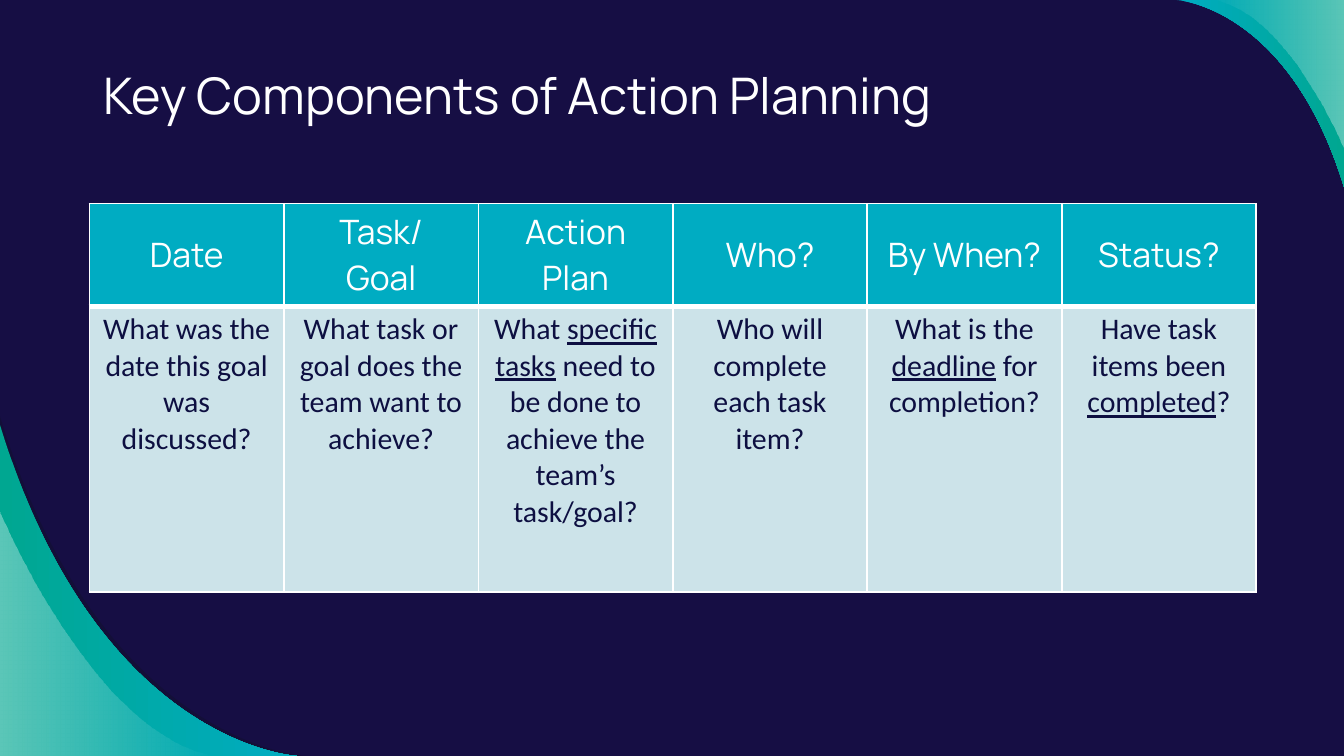
from lxml.etree import SubElement
from pptx import Presentation
from pptx.dml.color import RGBColor
from pptx.enum.text import MSO_ANCHOR as Anchor, PP_ALIGN as Align
from pptx.oxml import parse_xml
from pptx.oxml.ns import nsdecls, qn
from pptx.util import Cm, Pt

WIDTH, HEIGHT = Cm(25.4), Cm(14.29)
COLORS = {
    "night": "160E44",
    "shade": "12102F",
    "cyan": "00ACC2",
    "green": "00A791",
    "white": "FFFFFF",
    "pale": "CCE3E9",
    "ink": "0D0F41",
}
# Control points of an edge running from the top left to the bottom right of its box
OUTER_EDGE = ((0, 0), (0.33, 0.97), (1, 1), (1, 1))
INNER_EDGE = ((0, 0), (0, 0), (0.43, 0.93), (1, 1))

# Heading lines and question; underscores enclose underlined words
COMPONENTS = [
    (["Date"], "What was the date this goal was discussed?"),
    (["Task/", "Goal"], "What task or goal does the team want to achieve?"),
    (["Action Plan"], "What _specific tasks_ need to be done to achieve the team’s task/goal?"),
    (["Who?"], "Who will complete each task item?"),
    (["By When?"], "What is the _deadline_ for completion?"),
    (["Status?"], "Have task items been _completed_?"),
]


def rgb(name):
    return RGBColor.from_string(COLORS[name])


def bend_first_edge(freeform):
    """Turn the first three line segments into one cubic Bézier curve."""
    segments = list(freeform.element.iter(qn("a:lnTo")))[:3]
    curve = parse_xml(f'<a:cubicBezTo {nsdecls("a")}/>')
    segments[0].addprevious(curve)
    for segment in segments:
        curve.append(segment[0])
        segment.getparent().remove(segment)


def add_swoosh(slide, width, height, edge, stops, turned=False):
    """Fill the bottom left corner, or the top right one when turned.

    Each stop is a colour name and an opacity in percent, from left to right
    before turning; a single stop gives a plain fill.
    """
    left, top = (WIDTH - width, 0) if turned else (0, HEIGHT - height)
    points = [*edge, (0, 1)]
    if turned:
        points = [(1 - x, 1 - y) for x, y in points]
        stops = stops[::-1]
    outline = [(round(left + x * width), round(top + y * height)) for x, y in points]
    builder = slide.shapes.build_freeform(*outline[0], scale=1.0)
    builder.add_line_segments(outline[1:], close=True)
    swoosh = builder.convert_to_shape()
    bend_first_edge(swoosh)
    swoosh.shadow.inherit = False
    swoosh.line.fill.background()
    if len(stops) == 1:
        swoosh.fill.solid()
        swoosh.fill.fore_color.rgb = rgb(stops[0][0])
    else:
        swoosh.fill.gradient()
        swoosh.fill.gradient_angle = 0
        for gradient_stop, (color, _) in zip(swoosh.fill.gradient_stops, stops):
            gradient_stop.color.rgb = rgb(color)
    fill_colors = swoosh.element.spPr.iter(qn("a:srgbClr"))
    for fill_color, (_, opacity) in zip(fill_colors, stops):
        if opacity < 100:
            SubElement(fill_color, qn("a:alpha")).set("val", str(opacity * 1000))


def add_corners(slide):
    band = [("green", 100), ("cyan", 100)]
    gleam = [("white", 36), ("white", 0)]
    add_swoosh(slide, Cm(5.77), Cm(6.42), OUTER_EDGE, [("shade", 54)])
    add_swoosh(slide, Cm(5.61), Cm(6.26), OUTER_EDGE, band)
    add_swoosh(slide, Cm(4.11), Cm(4.64), INNER_EDGE, gleam)
    add_swoosh(slide, Cm(3.17), Cm(3.53), OUTER_EDGE, band, turned=True)
    add_swoosh(slide, Cm(2.51), Cm(2.84), INNER_EDGE, gleam, turned=True)


def style_paragraph(paragraph, font_name, size, color, align):
    paragraph.alignment = align
    font = paragraph.font
    font.name, font.size, font.bold = font_name, Pt(size), False
    font.color.rgb = rgb(color)


def place_title(slide, left, top, width, height):
    title = slide.shapes.title
    title.left, title.top, title.width, title.height = left, top, width, height
    frame = title.text_frame
    frame.text = "Key Components of Action Planning"
    frame.word_wrap = True
    frame.vertical_anchor = Anchor.TOP
    frame.margin_left = frame.margin_right = Cm(0.25)
    frame.margin_top = frame.margin_bottom = Cm(0.25)
    style_paragraph(frame.paragraphs[0], "Manrope", 27, "white", Align.LEFT)


def style_cell(cell, fill, anchor, top_line=1, bottom_line=1):
    cell.fill.solid()
    cell.fill.fore_color.rgb = rgb(fill)
    cell.vertical_anchor = anchor
    cell.margin_left = cell.margin_right = Cm(0.2)
    cell.margin_top = cell.margin_bottom = Cm(0.1)
    properties = cell._tc.get_or_add_tcPr()
    sides = (("L", 1), ("R", 1), ("T", top_line), ("B", bottom_line))
    for index, (side, points) in enumerate(sides):
        properties.insert(index, parse_xml(
            f'<a:ln{side} {nsdecls("a")} w="{Pt(points)}"><a:solidFill>'
            f'<a:srgbClr val="{COLORS["white"]}"/></a:solidFill></a:ln{side}>'))


def fill_question(paragraph, question):
    for index, part in enumerate(question.split("_")):
        run = paragraph.add_run()
        run.text = part
        if index % 2:
            run.font.underline = True
    style_paragraph(paragraph, "Calibri", 16, "ink", Align.CENTER)


def add_components_table(slide, left, top, width, height):
    table = slide.shapes.add_table(2, len(COMPONENTS), left, top, width, height).table
    table.horz_banding = False
    table.rows[0].height = Cm(1.73)
    table.rows[1].height = height - Cm(1.73)
    for column, (heading_lines, question) in enumerate(COMPONENTS):
        table.columns[column].width = width // len(COMPONENTS)
        heading_cell, question_cell = table.cell(0, column), table.cell(1, column)
        style_cell(heading_cell, "cyan", Anchor.MIDDLE, bottom_line=3)
        style_cell(question_cell, "pale", Anchor.TOP, top_line=3)
        heading_cell.text_frame.text = "\n".join(heading_lines)
        for paragraph in heading_cell.text_frame.paragraphs:
            style_paragraph(paragraph, "Manrope", 18, "white", Align.CENTER)
        fill_question(question_cell.text_frame.paragraphs[0], question)


def main():
    presentation = Presentation()
    presentation.slide_width, presentation.slide_height = WIDTH, HEIGHT
    slide = presentation.slides.add_slide(presentation.slide_layouts[5])
    slide.background.fill.solid()
    slide.background.fill.fore_color.rgb = rgb("night")
    add_corners(slide)
    place_title(slide, Cm(1.7), Cm(0.97), Cm(19.53), Cm(1.75))
    add_components_table(slide, Cm(1.69), Cm(3.85), Cm(22.05), Cm(7.13))
    presentation.save("out.pptx")


if __name__ == "__main__":
    main()
